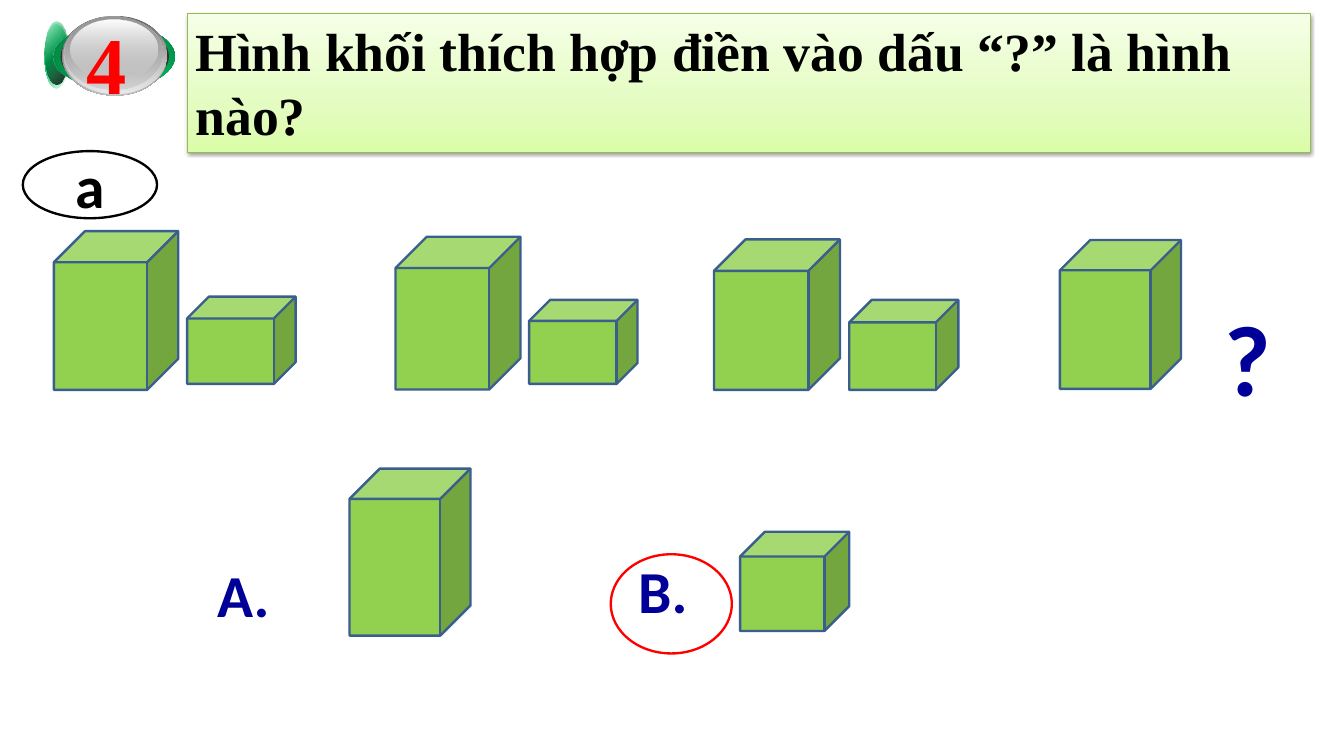
from dataclasses import dataclass

from lxml.etree import SubElement
from pptx import Presentation
from pptx.dml.color import RGBColor
from pptx.enum.shapes import MSO_SHAPE
from pptx.enum.text import MSO_ANCHOR, MSO_AUTO_SIZE, PP_ALIGN
from pptx.oxml.ns import qn
from pptx.util import Cm, Pt


@dataclass(frozen=True)
class Theme:
    serif: str = "Times New Roman"
    sans: str = "Calibri"
    black: str = "000000"
    white: str = "FFFFFF"
    red: str = "FF0000"
    navy: str = "000099"
    cube: str = "92D050"
    cube_edge: str = "3A5F8C"
    title_edge: str = "98B955"
    badge_base: str = "333333"
    number_size: int = 69
    title_size: int = 46
    mystery_size: int = 86
    label_size: int = 51
    edge: float = 2
    title_stops: tuple = ((0, "DAFDA7"), (35, "E4FCC2"), (100, "F5FFE7"))


THEME = Theme()

BADGE_LAYERS = [
    ((1.35, 0.74, 0.71, 1.93), 45, [(0, "FFFFFF"), (50, "00CC66"), (100, "FFFFFF")]),
    ((1.35, 0.64, 0.71, 1.93), 45, [(0, "00CC66", 32), (100, "000000", 90)]),
    ((1.63, 0.74, 3.66, 1.93), 315, [(0, "006E37"), (50, "00CC66"), (100, "006E37")]),
    ((1.63, 0.74, 3.66, 1.93), 45, [(0, "008241"), (100, "00CC66", 0)]),
    ((1.83, 0.74, 3.28, 1.93), None, THEME.badge_base),
    ((1.88, 0.48, 3.18, 2.41), 90, [(0, "595959"), (100, "C0C0C0")]),
    ((1.93, 0.48, 3.1, 2.36), 90, [(0, "C0C0C0", 0), (100, "E9E9E9")]),
    ((1.96, 0.51, 2.95, 2.21), 90, [(0, "989898"), (100, "C0C0C0", 48)]),
    ((2.13, 0.58, 2.62, 1.8), 90, [(0, "FFFFFF"), (100, "C0C0C0", 38)]),
]

PATTERN_CUBES = [
    (1.63, 6.99, 3.76, 4.8),
    (5.66, 8.97, 3.28, 2.64),
    (11.96, 7.16, 3.78, 4.62),
    (16, 9.07, 3.28, 2.54),
    (21.59, 7.24, 3.81, 4.55),
    (25.68, 9.07, 3.3, 2.72),
    (32.05, 7.26, 3.66, 4.5),
]

ANSWERS = [
    ("A.", (6.32, 16.74, 2.11, 2.84), (10.57, 14.17, 3.66, 5.05)),
    ("B.", (19.05, 16.61, 2.01, 3), (22.38, 16.08, 3.3, 3)),
]


def rgb(color):
    return RGBColor.from_string(color)


def add_color(parent, color, opacity=100):
    tint = SubElement(parent, qn("a:srgbClr"), val=color)
    if opacity < 100:
        SubElement(tint, qn("a:alpha"), val=str(opacity * 1000))


def fill_gradient(figure, angle, stops):
    figure.fill.background()
    properties = figure._element.spPr
    blank_fill = properties.find(qn("a:noFill"))
    gradient = SubElement(properties, qn("a:gradFill"), rotWithShape="1")
    properties.replace(blank_fill, gradient)
    stop_list = SubElement(gradient, qn("a:gsLst"))
    for position, *tint in stops:
        stop = SubElement(stop_list, qn("a:gs"), pos=str(position * 1000))
        add_color(stop, *tint)
    SubElement(gradient, qn("a:lin"), ang=str(angle * 60000), scaled="0")


def add_figure(slide, kind, box, fill=None, edge=None, width=THEME.edge):
    figure = slide.shapes.add_shape(kind, *map(Cm, box))
    figure.shadow.inherit = False
    if fill:
        figure.fill.solid()
        figure.fill.fore_color.rgb = rgb(fill)
    else:
        figure.fill.background()
    if edge:
        figure.line.color.rgb = rgb(edge)
        figure.line.width = Pt(width)
    else:
        figure.line.fill.background()
    return figure


def write(holder, words, font, size, color, insets=(0.25, 0.13),
          align=PP_ALIGN.LEFT, anchor=MSO_ANCHOR.TOP, wrap=True):
    frame = holder.text_frame
    frame.word_wrap = wrap
    frame.auto_size = MSO_AUTO_SIZE.NONE if wrap else MSO_AUTO_SIZE.SHAPE_TO_FIT_TEXT
    frame.vertical_anchor = anchor
    side, top = insets
    frame.margin_left = frame.margin_right = Cm(side)
    frame.margin_top = frame.margin_bottom = Cm(top)
    paragraph = frame.paragraphs[0]
    paragraph.alignment = align
    run = paragraph.add_run()
    run.text = words
    run.font.name = font
    run.font.size = Pt(size)
    run.font.bold = True
    run.font.color.rgb = rgb(color)


def add_label(slide, box, words, size):
    label = slide.shapes.add_textbox(*map(Cm, box))
    write(label, words, THEME.sans, size, THEME.navy, wrap=False)


def add_cube(slide, box):
    add_figure(slide, MSO_SHAPE.CUBE, box, THEME.cube, THEME.cube_edge)


def add_badge(slide):
    for box, angle, paint in BADGE_LAYERS:
        if angle is None:
            add_figure(slide, MSO_SHAPE.OVAL, box, paint)
        else:
            fill_gradient(add_figure(slide, MSO_SHAPE.OVAL, box), angle, paint)
    number = slide.shapes.add_textbox(*map(Cm, (2.36, 0.28, 3.23, 3.23)))
    write(number, "4", THEME.serif, THEME.number_size, THEME.red)


def add_title(slide):
    title = add_figure(slide, MSO_SHAPE.RECTANGLE, (5.66, 0.41, 33.97, 4.19),
                       edge=THEME.title_edge, width=0.75)
    fill_gradient(title, 270, THEME.title_stops)
    effects = title._element.spPr.find(qn("a:effectLst"))
    shadow = SubElement(effects, qn("a:outerShdw"), blurRad=str(Pt(3.1)),
                        dist=str(Pt(1.6)), dir=str(90 * 60000), rotWithShape="0")
    add_color(shadow, THEME.black, 38)
    write(title, "Hình khối thích hợp điền vào dấu “?” là hình nào?",
          THEME.serif, THEME.title_size, THEME.black)


def main():
    presentation = Presentation()
    presentation.slide_width = Cm(40.64)
    presentation.slide_height = Cm(22.86)
    slide = presentation.slides.add_slide(presentation.slide_layouts[6])

    add_badge(slide)
    add_title(slide)
    add_figure(slide, MSO_SHAPE.OVAL, (18.47, 16.76, 3.66, 3), edge=THEME.red)
    add_label(slide, (36.78, 8.84, 1.93, 4.42), "?", THEME.mystery_size)
    for box in PATTERN_CUBES:
        add_cube(slide, box)
    for letter, label_box, cube_box in ANSWERS:
        add_label(slide, label_box, letter, THEME.label_size)
        add_cube(slide, cube_box)
    part = add_figure(slide, MSO_SHAPE.OVAL, (0.69, 4.57, 4.06, 2.03),
                      THEME.white, THEME.black)
    write(part, "a", THEME.sans, THEME.label_size, THEME.black, (0.36, 0.18),
          align=PP_ALIGN.CENTER, anchor=MSO_ANCHOR.MIDDLE)

    presentation.save("out.pptx")


if __name__ == "__main__":
    main()
